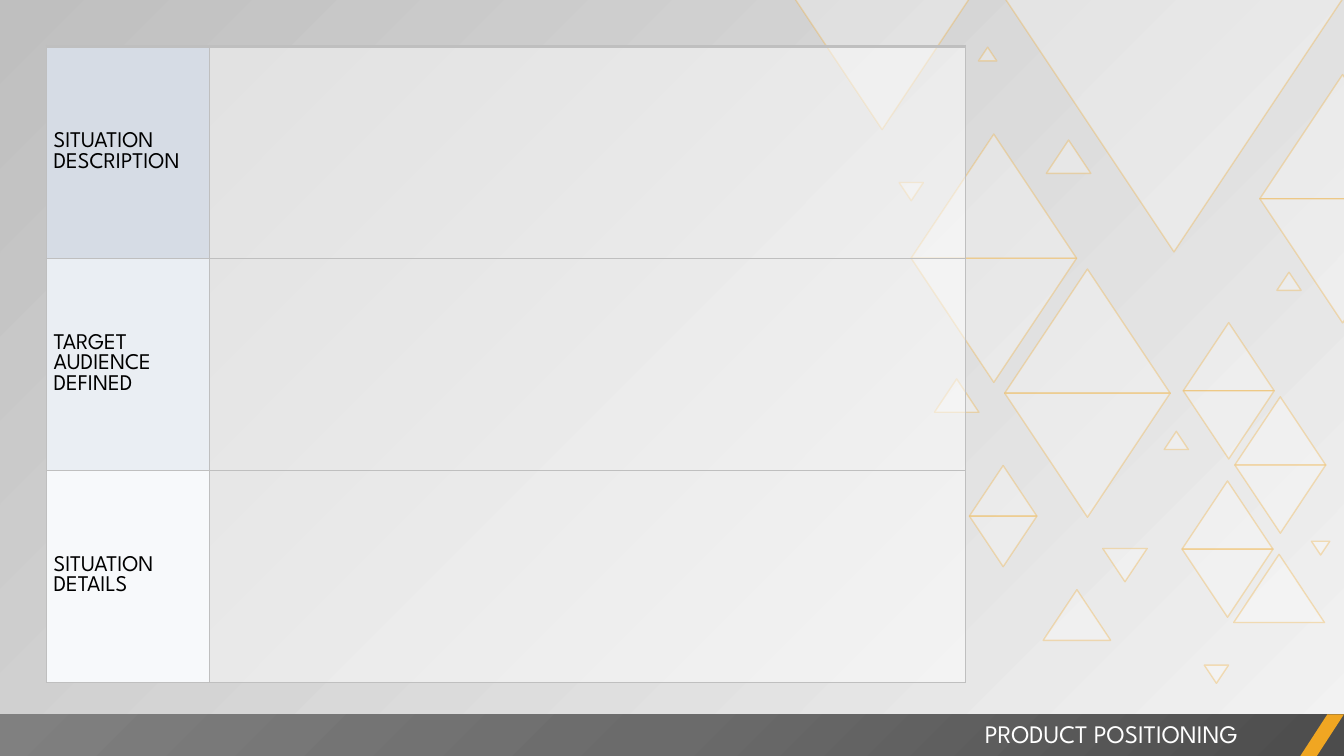
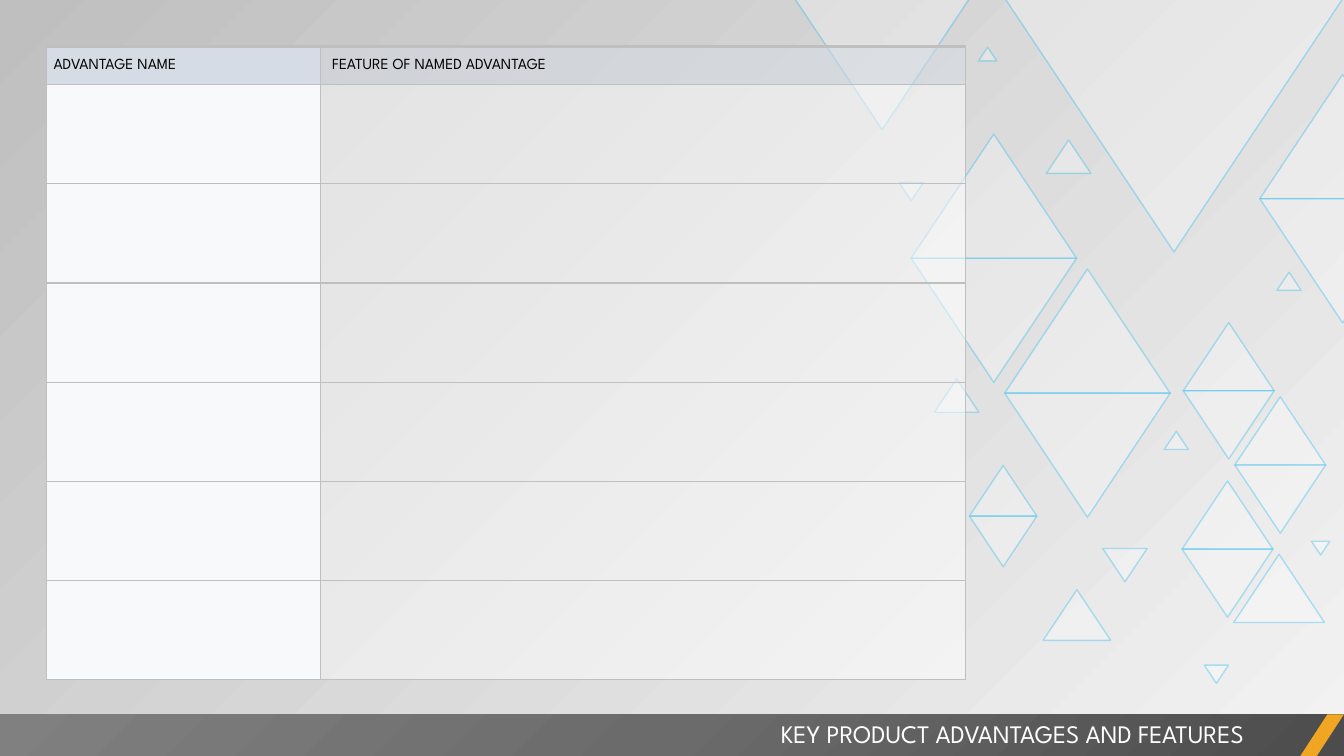
from lxml.etree import SubElement
from pptx import Presentation
from pptx.dml.color import RGBColor
from pptx.enum.shapes import MSO_SHAPE
from pptx.enum.text import MSO_ANCHOR, MSO_AUTO_SIZE, PP_ALIGN
from pptx.oxml.ns import qn
from pptx.util import Cm, Pt

FONT = "League Spartan"
WHITE = RGBColor(0xFF, 0xFF, 0xFF)
BLACK = RGBColor(0x00, 0x00, 0x00)
ORANGE = RGBColor(0xF0, 0xA6, 0x22)
BLUE = RGBColor(0x00, 0xB0, 0xF0)
RULE_GREY = RGBColor(0xBF, 0xBF, 0xBF)
PALE_GREY = RGBColor(0xF2, 0xF2, 0xF2)
BAND_DARK = RGBColor(0x4C, 0x4C, 0x4C)
BAND_MID = RGBColor(0x6B, 0x6B, 0x6B)
BAND_LIGHT = RGBColor(0x80, 0x80, 0x80)
STEEL = RGBColor(0xD6, 0xDC, 0xE5)
STEEL_LIGHT = RGBColor(0xEA, 0xEE, 0xF3)
STEEL_PALE = RGBColor(0xF7, 0xF9, 0xFB)

SLIDE_W, SLIDE_H = 33.87, 19.05
BAND_TOP = 18.0

# Triangles: left, top, width in cm, measured from the pattern's corner
TRIANGLE_RATIO = 0.75
DIAMONDS = [
    (2.96, 3.38, 4.17), (5.32, 6.78, 4.17), (9.79, 12.12, 2.29),
    (9.82, 8.13, 2.29), (11.12, 10.0, 2.29), (4.43, 11.73, 1.7),
    (11.75, 1.88, 4.17),
]
POINTING_UP = [
    (11.09, 13.97, 2.29), (6.29, 14.86, 1.7), (3.55, 9.55, 1.12),
    (9.34, 10.87, 0.61), (12.18, 6.86, 0.61), (4.66, 1.19, 0.46),
    (6.37, 3.53, 1.12),
]
POINTING_DOWN = [
    (5.32, -0.05, 8.53), (7.79, 13.82, 1.12), (10.35, 16.76, 0.61),
    (2.66, 4.6, 0.61), (13.05, 13.64, 0.46), (0.02, -0.05, 4.42),
]


def set_alpha(element, percent):
    """Make every colour inside the element translucent."""
    for clr in element.iter(qn("a:srgbClr")):
        SubElement(clr, qn("a:alpha"), val=str(percent * 1000))


def set_gradient(fill, element, stops):
    """Give the fill the (position, colour, alpha) stops; return its XML."""
    fill.gradient()
    grad = element.find(".//" + qn("a:gradFill"))
    for child in list(grad):
        grad.remove(child)
    gs_lst = SubElement(grad, qn("a:gsLst"))
    for pos, color, alpha in stops:
        gs = SubElement(gs_lst, qn("a:gs"), pos=str(pos * 1000))
        SubElement(gs, qn("a:srgbClr"), val=str(color))
        if alpha < 100:
            set_alpha(gs, alpha)
    return grad


def add_plain_shape(shapes, kind, left, top, width, height):
    sp = shapes.add_shape(kind, Cm(left), Cm(top), Cm(width), Cm(height))
    sp.shadow.inherit = False
    sp.line.fill.background()
    return sp


def add_background(slide):
    grad = set_gradient(slide.background.fill, slide.element,
                        [(0, PALE_GREY, 40), (100, RULE_GREY, 100)])
    SubElement(grad, qn("a:lin"), ang=str(225 * 60000), scaled="0")


def add_pattern(slide, left, top, color):
    group = slide.shapes.add_group_shape()

    def add_triangle(x, y, width, rotation):
        sp = add_plain_shape(group.shapes, MSO_SHAPE.ISOSCELES_TRIANGLE,
                             left + x, top + y, width, width * TRIANGLE_RATIO)
        sp.rotation = rotation
        sp.fill.solid()
        sp.fill.fore_color.rgb = WHITE
        sp.line.color.rgb = color
        sp.line.width = Pt(1)
        set_alpha(sp.element.spPr, 30)

    for x, y, width in DIAMONDS:
        add_triangle(x, y, width, 0)
        add_triangle(x, y + width * TRIANGLE_RATIO, width, 180)
    for x, y, width in POINTING_UP:
        add_triangle(x, y, width, 0)
    for x, y, width in POINTING_DOWN:
        add_triangle(x, y, width, 180)


def add_title_band(slide, top, height, title):
    band = add_plain_shape(slide.shapes, MSO_SHAPE.RECTANGLE,
                           0, top, SLIDE_W, height)
    grad = set_gradient(band.fill, band.element,
                        [(0, BAND_DARK, 100), (50, BAND_MID, 100),
                         (100, BAND_LIGHT, 100)])
    path = SubElement(grad, qn("a:path"), path="circle")
    SubElement(path, qn("a:fillToRect"), l="100000", t="100000")

    accent = add_plain_shape(slide.shapes, MSO_SHAPE.PARALLELOGRAM,
                             SLIDE_W - 1.1, top, 1.1, height)
    accent.adjustments[0] = 0.65
    accent.fill.solid()
    accent.fill.fore_color.rgb = ORANGE

    box = slide.shapes.add_textbox(Cm(13.34), Cm(top - 0.02),
                                   Cm(18.26), Cm(1.02))
    tf = box.text_frame
    tf.word_wrap = True
    tf.auto_size = MSO_AUTO_SIZE.SHAPE_TO_FIT_TEXT
    p = tf.paragraphs[0]
    p.text = title
    p.alignment = PP_ALIGN.RIGHT
    p.font.name = FONT
    p.font.size = Pt(18)
    p.font.color.rgb = WHITE


def set_borders(cell, top_width):
    tc_pr = cell._tc.get_or_add_tcPr()
    for side, width in (("L", 1), ("R", 1), ("T", top_width), ("B", 1)):
        ln = SubElement(tc_pr, qn(f"a:ln{side}"), w=str(Pt(width)))
        fill = SubElement(ln, qn("a:solidFill"))
        SubElement(fill, qn("a:srgbClr"), val=str(RULE_GREY))


def fill_cell(cell, text, size, color, alpha, indent):
    cell.fill.solid()
    cell.fill.fore_color.rgb = color
    if alpha < 100:
        set_alpha(cell._tc.tcPr.find(qn("a:solidFill")), alpha)
    cell.vertical_anchor = MSO_ANCHOR.MIDDLE
    cell.margin_left, cell.margin_right = Cm(indent), Cm(0.18)
    cell.margin_top = cell.margin_bottom = 0
    p = cell.text_frame.paragraphs[0]
    p.text = text
    p.font.name = FONT
    p.font.size = Pt(size)
    p.font.color.rgb = BLACK


def add_form_table(slide, left, top, col_widths, rows, size):
    """Rows are (height, label, label colour, entry, entry colour)."""
    height = sum(row[0] for row in rows)
    table = slide.shapes.add_table(len(rows), 2, Cm(left), Cm(top),
                                   Cm(sum(col_widths)), Cm(height)).table
    table.first_row = table.horz_banding = False
    for column, width in zip(table.columns, col_widths):
        column.width = Cm(width)
    for i, (height, label, label_color, entry, entry_color) in enumerate(rows):
        table.rows[i].height = Cm(height)
        for cell in table.rows[i].cells:
            set_borders(cell, 1 if i else 3)
        fill_cell(table.cell(i, 0), label, size, label_color, 100, 0.18)
        fill_cell(table.cell(i, 1), entry, size, entry_color, 50, 0.29)


def add_form_slide(prs, title, pattern_color, col_widths, rows, size):
    slide = prs.slides.add_slide(prs.slide_layouts[6])
    add_background(slide)
    add_pattern(slide, 20, 0, pattern_color)
    add_title_band(slide, BAND_TOP, SLIDE_H - BAND_TOP, title)
    add_form_table(slide, 1.17, 1.17, col_widths, rows, size)


def main():
    prs = Presentation()
    prs.slide_width, prs.slide_height = Cm(SLIDE_W), Cm(SLIDE_H)

    positioning = [
        (5.34, "SITUATION DESCRIPTION", STEEL, "", WHITE),
        (5.34, "TARGET AUDIENCE DEFINED", STEEL_LIGHT, "", WHITE),
        (5.34, "SITUATION DETAILS", STEEL_PALE, "", WHITE),
    ]
    add_form_slide(prs, "PRODUCT POSITIONING ", ORANGE,
                   (4.11, 19.05), positioning, 16)

    header = (0.96, "ADVANTAGE NAME", STEEL,
              "FEATURE OF NAMED ADVANTAGE", STEEL)
    advantages = [header] + [(2.5, "", STEEL_PALE, "", WHITE)] * 6
    add_form_slide(prs, "KEY PRODUCT ADVANTAGES AND FEATURES", BLUE,
                   (6.91, 16.25), advantages, 11)

    prs.save("out.pptx")


if __name__ == "__main__":
    main()
